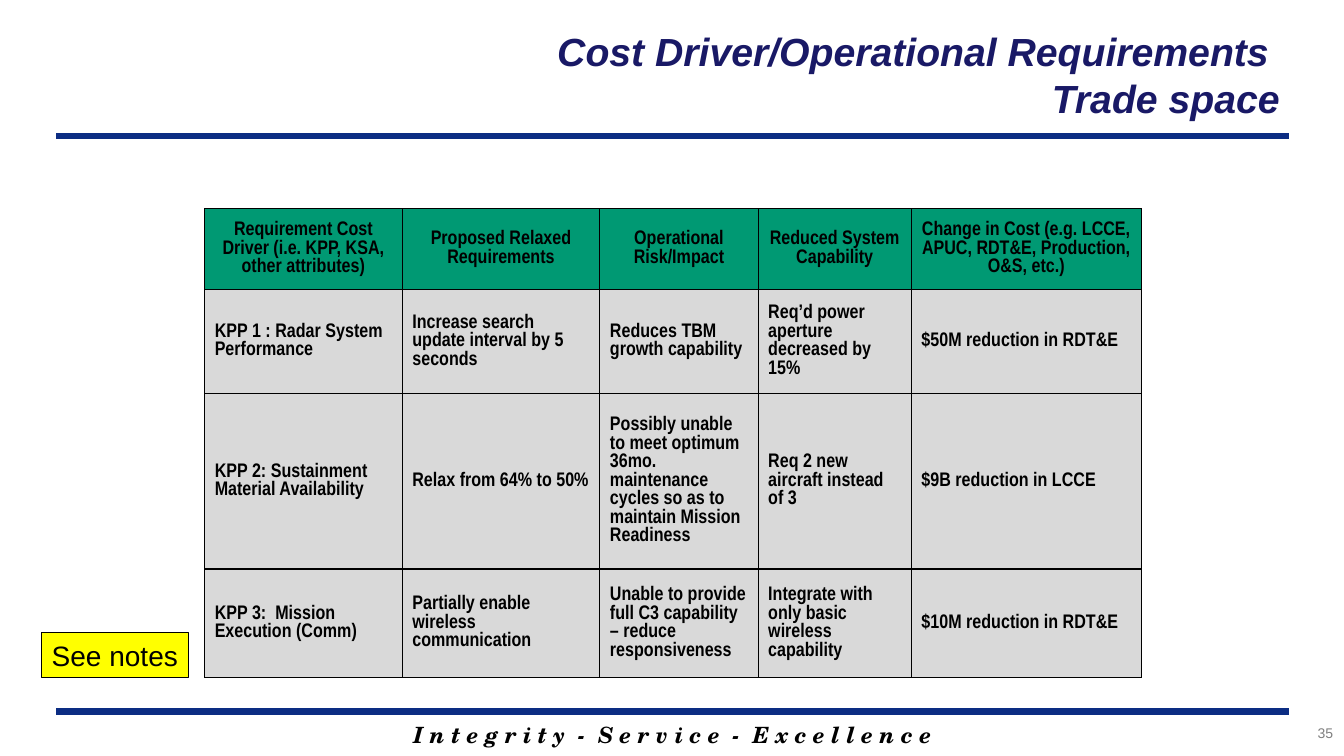
from lxml.etree import SubElement
from pptx import Presentation
from pptx.dml.color import RGBColor
from pptx.enum.shapes import MSO_CONNECTOR, MSO_SHAPE
from pptx.enum.text import MSO_ANCHOR, PP_ALIGN
from pptx.oxml.ns import qn
from pptx.util import Inches, Pt

# Content
TITLE = ["Cost Driver/Operational Requirements ", "Trade space"]
MOTTO = "I n t e g r i t y  -  S e r v i c e  -  E x c e l l e n c e"
NOTE = "See notes"
PAGE_NUMBER = "35"
TRADES = [
    ("Requirement Cost Driver (i.e. KPP, KSA, other attributes)",
     "Proposed Relaxed Requirements",
     "Operational Risk/Impact",
     "Reduced System Capability",
     "Change in Cost (e.g. LCCE, APUC, RDT&E, Production, O&S, etc.)"),
    ("KPP 1 : Radar System Performance",
     "Increase search update interval by 5 seconds",
     "Reduces TBM growth capability",
     "Req’d power aperture decreased by 15%",
     "$50M reduction in RDT&E"),
    ("KPP 2: Sustainment Material Availability",
     "Relax from 64% to 50%",
     "Possibly unable to meet optimum 36mo. maintenance cycles so as to "
     "maintain Mission Readiness",
     "Req 2 new aircraft instead of 3",
     "$9B reduction in LCCE"),
    ("KPP 3:  Mission Execution (Comm)",
     "Partially enable wireless communication",
     "Unable to provide full C3 capability – reduce responsiveness",
     "Integrate with only basic wireless capability",
     "$10M reduction in RDT&E"),
]

# Layout in inches
COLUMN_WIDTHS = [1.96, 1.96, 1.57, 1.52, 2.28]
ROW_HEIGHTS = [0.8, 1.03, 1.74, 1.08]
TABLE_LEFT, TABLE_TOP = 2.03, 2.07
RULE_LEFT, RULE_RIGHT = 0.56, 12.78
RULE_TOPS = [7.06, 1.35]

BLACK = RGBColor(0x00, 0x00, 0x00)
NAVY = RGBColor(0x19, 0x19, 0x66)
BLUE = RGBColor(0x0C, 0x2D, 0x83)
GREEN = RGBColor(0x00, 0x99, 0x73)
SILVER = RGBColor(0xD9, 0xD9, 0xD9)
YELLOW = RGBColor(0xFF, 0xFF, 0x00)
GRAY = RGBColor(0x7F, 0x7F, 0x7F)


def style(paragraph, name, size, color, alignment, bold=False, italic=False):
    paragraph.alignment = alignment
    font = paragraph.font
    font.name, font.size = name, Pt(size)
    font.bold, font.italic = bold, italic
    font.color.rgb = color


def add_text(slide, box, lines, anchor, *look):
    shape = slide.shapes.add_textbox(*map(Inches, box))
    frame = shape.text_frame
    frame.word_wrap = True
    frame.vertical_anchor = anchor
    frame.text = "\n".join(lines)
    for paragraph in frame.paragraphs:
        style(paragraph, *look)


def add_rule(slide, top):
    rule = slide.shapes.add_connector(
        MSO_CONNECTOR.STRAIGHT, Inches(RULE_LEFT), Inches(top),
        Inches(RULE_RIGHT), Inches(top))
    rule.line.color.rgb = BLUE
    rule.line.width = Pt(4.5)
    SubElement(rule._element.spPr, qn("a:effectLst"))


def add_borders(cell):
    properties = cell._tc.get_or_add_tcPr()
    for side in ("lnL", "lnR", "lnT", "lnB"):
        line = SubElement(properties, qn(f"a:{side}"), w=str(Pt(1)))
        fill = SubElement(line, qn("a:solidFill"))
        SubElement(fill, qn("a:srgbClr"), val=str(BLACK))


def add_trade_table(slide):
    table = slide.shapes.add_table(
        len(ROW_HEIGHTS), len(COLUMN_WIDTHS), Inches(TABLE_LEFT), Inches(TABLE_TOP),
        Inches(sum(COLUMN_WIDTHS)), Inches(sum(ROW_HEIGHTS))).table
    table.first_row = table.horz_banding = False
    for column, width in zip(table.columns, COLUMN_WIDTHS):
        column.width = Inches(width)
    for row_index, (row, height) in enumerate(zip(table.rows, ROW_HEIGHTS)):
        row.height = Inches(height)
        header = row_index == 0
        for cell, text in zip(row.cells, TRADES[row_index]):
            cell.text = text
            cell.vertical_anchor = MSO_ANCHOR.MIDDLE
            add_borders(cell)
            cell.fill.solid()
            cell.fill.fore_color.rgb = GREEN if header else SILVER
            style(cell.text_frame.paragraphs[0], "Arial Narrow", 14, BLACK,
                  PP_ALIGN.CENTER if header else PP_ALIGN.LEFT, True)


def add_note(slide):
    note = slide.shapes.add_shape(
        MSO_SHAPE.RECTANGLE, Inches(0.41), Inches(6.28), Inches(1.46), Inches(0.44))
    note.shadow.inherit = False
    note.fill.solid()
    note.fill.fore_color.rgb = YELLOW
    note.line.color.rgb = BLACK
    note.line.width = Pt(0.75)
    note.text_frame.word_wrap = False
    note.text_frame.text = NOTE
    style(note.text_frame.paragraphs[0], "Arial", 20, BLACK, PP_ALIGN.CENTER)


def main():
    presentation = Presentation()
    presentation.slide_width = Inches(13.33)
    presentation.slide_height = Inches(7.5)
    slide = presentation.slides.add_slide(presentation.slide_layouts[6])

    # Motto and rules
    add_text(slide, (1.89, 7.1, 9.56, 0.37), [MOTTO], MSO_ANCHOR.MIDDLE,
             "TeX Gyre Schola", 16, BLACK, PP_ALIGN.CENTER, True, True)
    for top in RULE_TOPS:
        add_rule(slide, top)

    # Table, title, note and page number
    add_trade_table(slide)
    add_text(slide, (2.03, 0.22, 10.76, 1.04), TITLE, MSO_ANCHOR.MIDDLE,
             "Arial", 28, NAVY, PP_ALIGN.RIGHT, True, True)
    add_note(slide)
    add_text(slide, (11.65, 7.14, 1.67, 0.33), [PAGE_NUMBER], MSO_ANCHOR.TOP,
             "Arial", 10, GRAY, PP_ALIGN.RIGHT)

    presentation.save("out.pptx")


if __name__ == "__main__":
    main()
